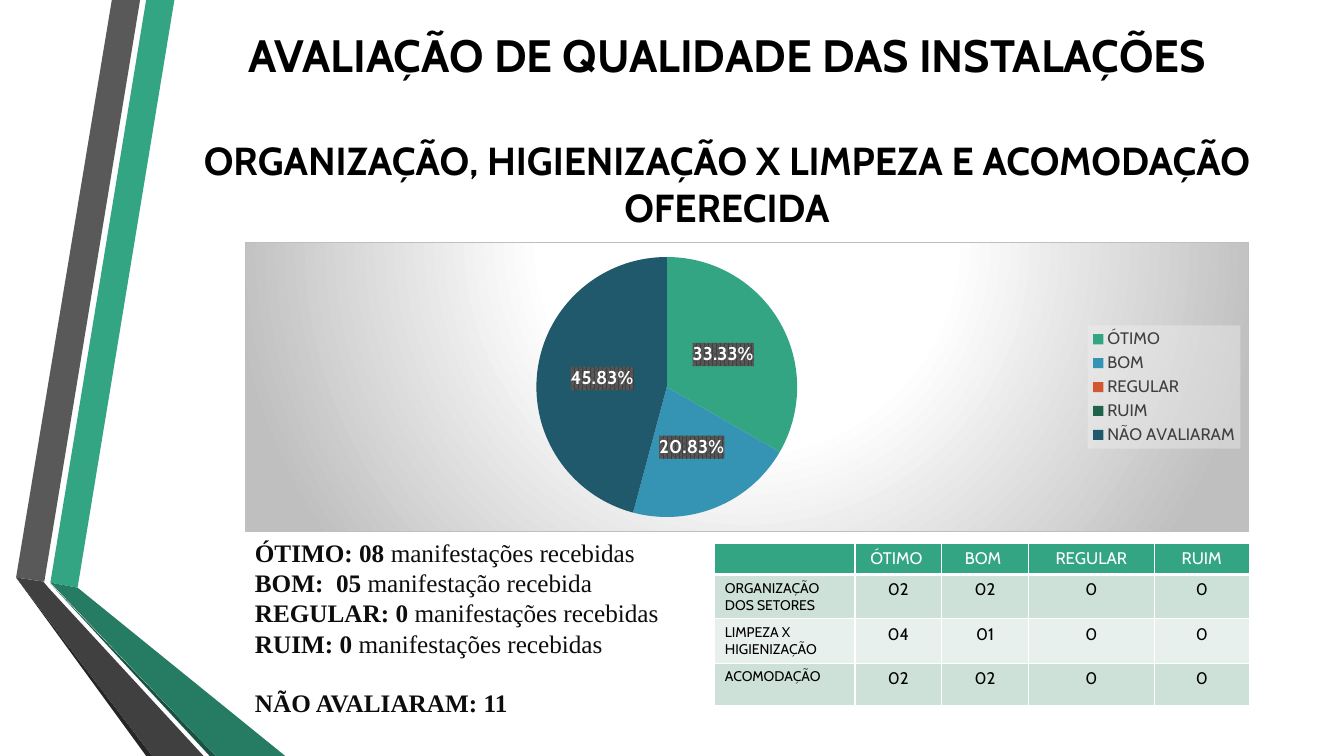
"""Build the slide on the quality rating of the facilities."""
import pptx
import pptx.chart.data
import pptx.dml.color
import pptx.enum.chart
import pptx.enum.text
import pptx.oxml
import pptx.util

PX = 9144
FONT = "Cabin"
SERIF = "Times New Roman"
COLORS = {
    "green": "33A583", "blue": "3594B4", "orange": "D35731",
    "forest": "1F634F", "navy": "20596C", "moss": "267C62", "pine": "1A5242",
    "gray": "595959", "charcoal": "404040", "shade": "262626",
    "silver": "BFBFBF", "mist": "F2F2F2", "band": "CEE1D9", "pale": "E8F0ED",
    "white": "FFFFFF", "black": "000000", "ink": "0D0D0D",
}
NS = ('xmlns:c="http://schemas.openxmlformats.org/drawingml/2006/chart" '
      'xmlns:a="http://schemas.openxmlformats.org/drawingml/2006/main"')


def style(font, name, size, color, bold=False):
    font.name = name
    font.size = pptx.util.Pt(size)
    font.bold = bold
    font.color.rgb = pptx.dml.color.RGBColor.from_string(COLORS[color])


def xml(text):
    head, tail = text.split(">", 1)
    if head.endswith("/"):
        return pptx.oxml.parse_xml(f"{head[:-1]} {NS}/>{tail}")
    return pptx.oxml.parse_xml(f"{head} {NS}>{tail}")


prs = pptx.Presentation()
prs.slide_width, prs.slide_height = 1333 * PX, 750 * PX
s = prs.slides.add_slide(prs.slide_layouts[5])

RIBBONS = [
    ("green", [(50, 578), (77, 583), (173, 0), (145, 0)]),
    ("gray", [(139, 0), (111, 0), (16, 573), (44, 577)]),
    ("shade", [(16, 573), (145, 750), (151, 750)]),
    ("pine", [(50, 579), (208, 750), (214, 750)]),
    ("moss", [(50, 578), (214, 750), (283, 750), (77, 583)]),
    ("charcoal", [(202, 750), (48, 583), (43, 577), (16, 573), (151, 750)]),
]
for color, points in RIBBONS:
    builder = s.shapes.build_freeform(*points[0], scale=PX)
    builder.add_line_segments(points[1:], close=True)
    sp = builder.convert_to_shape()
    sp.shadow.inherit = False
    sp.fill.solid()
    sp.fill.fore_color.rgb = pptx.dml.color.RGBColor.from_string(COLORS[color])
    sp.line.fill.background()

title = s.shapes.title
title.left, title.top, title.width, title.height = 173 * PX, 2 * PX, 1096 * PX, 252 * PX
tf = title.text_frame
tf.text = ("AVALIAÇÃO DE QUALIDADE DAS INSTALAÇÕES\n"
           "ORGANIZAÇÃO, HIGIENIZAÇÃO X LIMPEZA E ACOMODAÇÃO OFERECIDA")
tf.word_wrap = True
tf.auto_size = pptx.enum.text.MSO_AUTO_SIZE.NONE
tf.vertical_anchor = pptx.enum.text.MSO_ANCHOR.MIDDLE
for p, size, gap in zip(tf.paragraphs, (32.4, 27.9), (0, 39)):
    p.alignment = pptx.enum.text.PP_ALIGN.CENTER
    p.space_before = pptx.util.Pt(gap)
    style(p.runs[0].font, FONT, size, "black", True)

data = pptx.chart.data.CategoryChartData()
data.categories = ["ÓTIMO", "BOM", "REGULAR", "RUIM", "NÃO AVALIARAM"]
data.add_series("Series 1", (33.33, 20.83, 0, 0, 45.83))
chart = s.shapes.add_chart(pptx.enum.chart.XL_CHART_TYPE.PIE, 243 * PX, 240 * PX,
                           996 * PX, 288 * PX, data).chart
chart.has_title = False
style(chart.font, FONT, 10, "black")
chart.has_legend = True
legend = chart.legend
legend.position = pptx.enum.chart.XL_LEGEND_POSITION.RIGHT
legend.include_in_layout = False
style(legend.font, FONT, 12, "charcoal")
legend._element.find(pptx.oxml.ns.qn("c:txPr")).addprevious(xml(
    f'<c:spPr><a:solidFill><a:srgbClr val="{COLORS["mist"]}"><a:alpha val="39000"/>'
    '</a:srgbClr></a:solidFill></c:spPr>'))

plot = chart.plots[0]
plot.vary_by_categories = True
for i, color in enumerate(("green", "blue", "orange", "forest", "navy")):
    slice_format = plot.series[0].points[i].format
    slice_format.fill.solid()
    slice_format.fill.fore_color.rgb = pptx.dml.color.RGBColor.from_string(COLORS[color])
    slice_format.line.fill.background()

labels = plot.series[0].data_labels
labels.show_percentage = True
labels.show_value = False
labels.number_format = "0.00%"
labels.number_format_is_linked = False
labels.position = pptx.enum.chart.XL_LABEL_POSITION.CENTER
style(labels.font, FONT, 13.3, "white", True)
labels._element.find(pptx.oxml.ns.qn("c:txPr")).addprevious(xml(
    '<c:spPr><a:pattFill prst="pct75">'
    f'<a:fgClr><a:srgbClr val="{COLORS["charcoal"]}"/></a:fgClr>'
    f'<a:bgClr><a:srgbClr val="{COLORS["gray"]}"/></a:bgClr></a:pattFill></c:spPr>'))
for position, empty_slice in enumerate((2, 3)):
    labels._element.insert(position, xml(
        f'<c:dLbl><c:idx val="{empty_slice}"/><c:delete val="1"/></c:dLbl>'))

plot_area = chart._chartSpace.chart.plotArea
for layout in plot_area.findall(pptx.oxml.ns.qn("c:layout")):
    plot_area.remove(layout)
plot_area.insert(0, xml(
    '<c:layout><c:manualLayout><c:layoutTarget val="inner"/>'
    '<c:xMode val="edge"/><c:yMode val="edge"/><c:x val="0.29"/><c:y val="0.05"/>'
    '<c:w val="0.26"/><c:h val="0.9"/></c:manualLayout></c:layout>'))
stops = "".join(f'<a:gs pos="{pos}000"><a:srgbClr val="{COLORS[color]}"/></a:gs>'
                for pos, color in ((0, "white"), (39, "white"), (100, "silver")))
chart._chartSpace.chart.addnext(xml(
    f'<c:spPr><a:gradFill><a:gsLst>{stops}</a:gsLst><a:path path="circle">'
    '<a:fillToRect l="50000" t="-80000" r="50000" b="180000"/></a:path></a:gradFill>'
    f'<a:ln w="9525"><a:solidFill><a:srgbClr val="{COLORS["silver"]}"/></a:solidFill>'
    '</a:ln></c:spPr>'))

TOTALS = [
    ("ÓTIMO: 08 ", "manifestações recebidas"),
    ("BOM:  05 ", "manifestação recebida"),
    ("REGULAR: 0 ", "manifestações recebidas"),
    ("RUIM: 0 ", "manifestações recebidas"),
    ("NÃO AVALIARAM: 11", ""),
]
tf = s.shapes.add_textbox(243 * PX, 528 * PX, 438 * PX, 222 * PX).text_frame
tf.word_wrap = True
tf.text = "\n".join(label for label, _ in TOTALS)
for p, (_, detail) in zip(tf.paragraphs, TOTALS):
    style(p.runs[0].font, SERIF, 18, "ink", True)
    if detail:
        r = p.add_run()
        r.text = detail
        style(r.font, SERIF, 18, "ink")
tf.paragraphs[-1].space_before = pptx.util.Pt(21)

ROWS = [
    ("", "ÓTIMO ", "BOM ", "REGULAR", "RUIM"),
    ("ORGANIZAÇÃO DOS SETORES", "02", "02", "0", "0"),
    ("LIMPEZA X HIGIENIZAÇÃO", "04", "01", "0", "0"),
    ("ACOMODAÇÃO", "02", "02", "0", "0"),
]
table = s.shapes.add_table(4, 5, 709 * PX, 539 * PX, 530 * PX, 161 * PX).table
for column, width in zip(table.columns, (139, 86, 86, 125, 94)):
    column.width = width * PX
for row, height in zip(table.rows, (31, 44, 44, 42)):
    row.height = height * PX
for i, texts in enumerate(ROWS):
    for j, text in enumerate(texts):
        cell = table.cell(i, j)
        cell.text = text
        p = cell.text_frame.paragraphs[0]
        p._p.get_or_add_endParaRPr().set("sz", "1200")
        if j:
            p.alignment = pptx.enum.text.PP_ALIGN.CENTER
        for r in p.runs:
            style(r.font, FONT, 12 if j else 10, "black" if i else "white")
        for side in "LRTB":
            weight = 3 if (i, side) == (0, "B") else 1
            cell._tc.get_or_add_tcPr().append(xml(
                f'<a:ln{side} w="{weight * 12700}"><a:solidFill>'
                f'<a:srgbClr val="{COLORS["white"]}"/></a:solidFill></a:ln{side}>'))
        cell.fill.solid()
        cell.fill.fore_color.rgb = pptx.dml.color.RGBColor.from_string(
            COLORS[("green", "band", "pale", "band")[i]])

prs.save("out.pptx")
